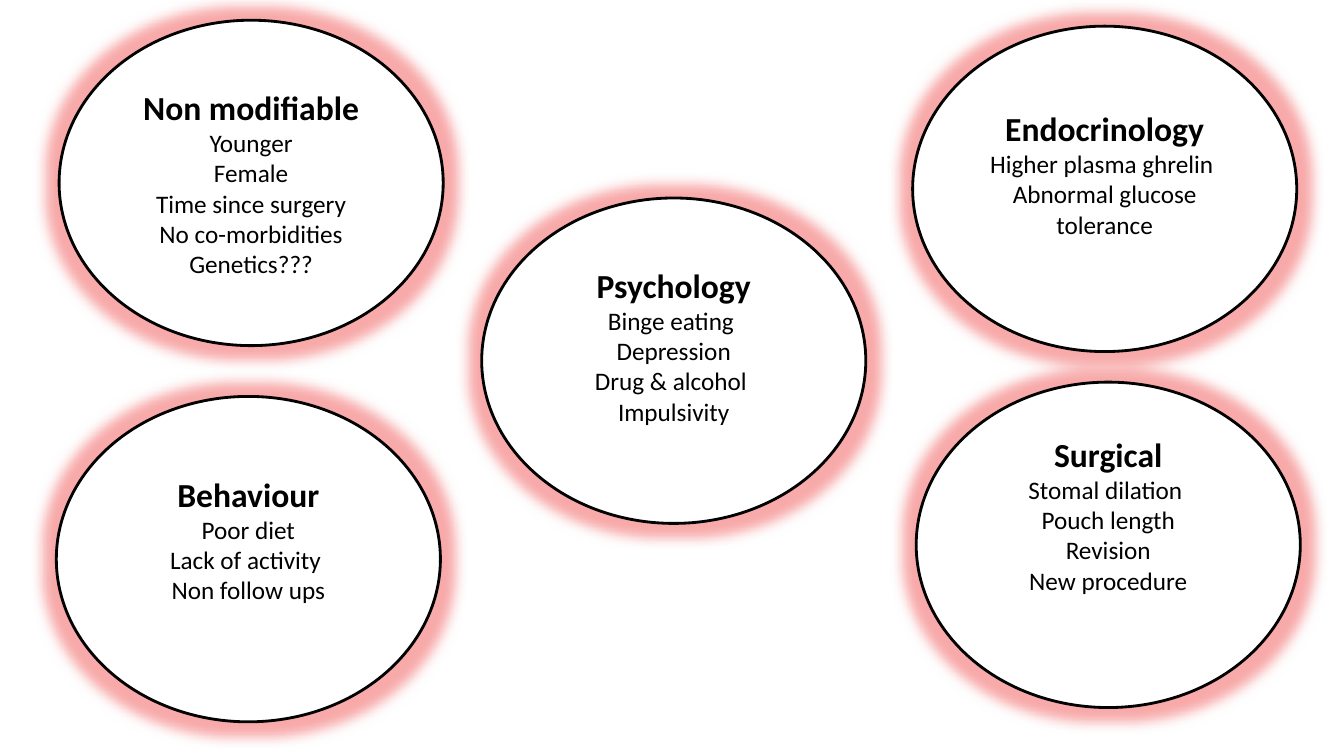
from lxml import etree
from pptx import Presentation
from pptx import util as u
from pptx.dml.color import RGBColor
from pptx.enum import shapes, text
from pptx.oxml import ns

WIDTH, HEIGHT = 9.68, 8.2
GLOW_RADIUS = 0.63
HEADING_SIZE, ITEM_SIZE = 24, 18

# Left, top, extra room under the text (all cm), heading, items
FACTORS = [
    (1.42, 9.99, 1.0, "Behaviour",
     ["Poor diet", "Lack of activity ", "Non follow ups"]),
    (23.0, 0.66, 0.76, "Endocrinology",
     ["Higher plasma ghrelin  Abnormal glucose tolerance"]),
    (1.49, 0.51, 0, "Non modifiable",
     ["Younger", "Female", "Time since surgery", "No co-morbidities", "Genetics???"]),
    (23.09, 9.63, 1.52, "Surgical",
     ["Stomal dilation ", "Pouch length", "Revision", "New procedure"]),
    (12.14, 4.99, 0.76, "Psychology",
     ["Binge eating ", " Depression ", "Drug & alcohol ", "Impulsivity"]),
]


def color(value):
    return RGBColor.from_string(value)


def add_glow(shape, value, alpha):
    """Replace the theme effects by a soft halo; alpha is in percent."""
    shape.shadow.inherit = False
    effects = shape.element.spPr.find(ns.qn("a:effectLst"))
    glow = etree.SubElement(effects, ns.qn("a:glow"), rad=str(int(u.Cm(GLOW_RADIUS))))
    tint = etree.SubElement(glow, ns.qn("a:srgbClr"), val=value)
    etree.SubElement(tint, ns.qn("a:alpha"), val=str(alpha * 1000))


deck = Presentation()
deck.slide_width, deck.slide_height = u.Cm(33.87), u.Cm(19.05)
page = deck.slides.add_slide(deck.slide_layouts[6])

for left, top, room_below, heading, items in FACTORS:
    oval = page.shapes.add_shape(shapes.MSO_SHAPE.OVAL, u.Cm(left), u.Cm(top),
                                 u.Cm(WIDTH), u.Cm(HEIGHT))
    oval.fill.solid()
    oval.fill.fore_color.rgb = color("FFFFFF")
    oval.line.color.rgb = color("000000")
    oval.line.width = u.Pt(2)
    add_glow(oval, "EE2A2A", 40)

    frame = oval.text_frame
    frame.word_wrap = True
    frame.vertical_anchor = text.MSO_ANCHOR.MIDDLE
    frame.margin_bottom = u.Cm(0.13 + room_below)
    frame.text = "\n".join([heading] + items)
    for index, para in enumerate(frame.paragraphs):
        para.alignment = text.PP_ALIGN.CENTER
        para.font.name = "Calibri"
        para.font.size = u.Pt(ITEM_SIZE if index else HEADING_SIZE)
        para.font.bold = index == 0
        para.font.color.rgb = color("000000")

deck.save("out.pptx")
